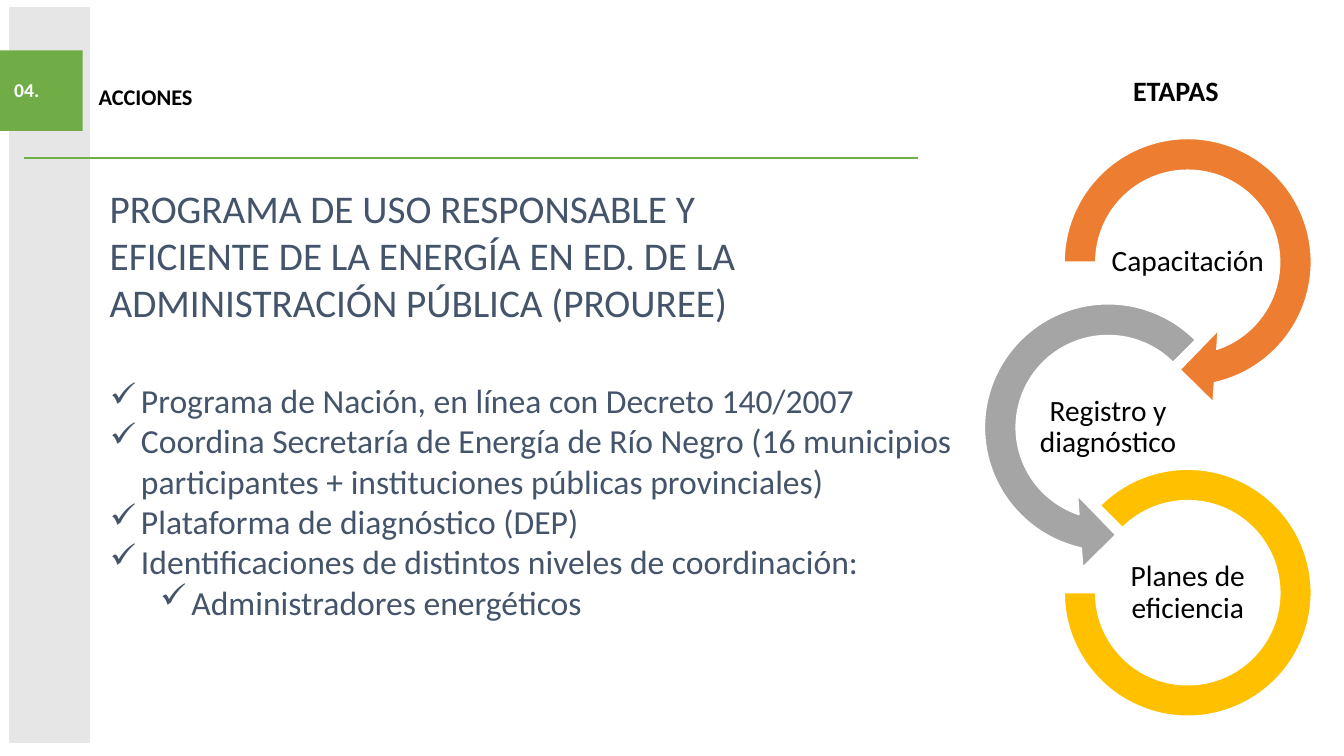
"""Build the PROUREE actions slide with its three-stage ring diagram."""
from lxml.etree import SubElement
from pptx import Presentation
from pptx.dml.color import RGBColor
from pptx.enum.shapes import MSO_CONNECTOR, MSO_SHAPE
from pptx.enum.text import MSO_ANCHOR, PP_ALIGN
from pptx.oxml.ns import qn
from pptx.util import Inches, Pt

THEME = {
    "font": "Calibri",
    "colors": {"band": "E7E6E6", "green": "70AD47", "slate": "44546A", "orange": "ED7D31",
               "gray": "A5A5A5", "gold": "FFC000", "black": "000000", "white": "FFFFFF"},
    "sizes": {"number": 14, "section": 16, "stages": 20, "stage": 21, "bullet": 24, "title": 28},
}
COLUMNS, ROWS = 133.3, 75
CELL = Inches(0.1)

presentation = Presentation()
presentation.slide_width = int(COLUMNS * CELL)
presentation.slide_height = int(ROWS * CELL)
slide = presentation.slides.add_slide(presentation.slide_layouts[6])


def add_panel(kind, box, fill, line=None):
    """Add a filled preset shape on the grid."""
    shape = slide.shapes.add_shape(kind, *(int(cells * CELL) for cells in box))
    shape.shadow.inherit = False
    shape.fill.solid()
    shape.fill.fore_color.rgb = RGBColor.from_string(THEME["colors"][fill])
    if line:
        shape.line.color.rgb = RGBColor.from_string(THEME["colors"][line])
        shape.line.width = Pt(1)
    else:
        shape.line.fill.background()
    return shape


def write(shape, lines, size, color, bold=False, frame=None, paragraph_format=None):
    """Fill a shape with paragraphs in one type style."""
    text_frame = shape.text_frame
    text_frame.text = "\n".join(lines)
    for name, value in ({"word_wrap": True, "vertical_anchor": MSO_ANCHOR.TOP} | (frame or {})).items():
        setattr(text_frame, name, value)
    for paragraph in text_frame.paragraphs:
        for name, value in ({"alignment": PP_ALIGN.LEFT} | (paragraph_format or {})).items():
            setattr(paragraph, name, value)
        font = paragraph.runs[0].font
        for name, value in {"name": THEME["font"], "size": Pt(THEME["sizes"][size]), "bold": bold}.items():
            setattr(font, name, value)
        font.color.rgb = RGBColor.from_string(THEME["colors"][color])
    return text_frame.paragraphs


add_panel(MSO_SHAPE.RECTANGLE, (1, 0.8, 7.9, 72.8), "band", "band")

rule = slide.shapes.add_connector(
    MSO_CONNECTOR.STRAIGHT, *(int(cells * CELL) for cells in (2.4, 15.7, 91, 15.7)))
rule.line.color.rgb = RGBColor.from_string(THEME["colors"]["green"])
rule.line.width = Pt(1.5)
SubElement(rule._element.spPr, qn("a:effectLst"))

middle = {"vertical_anchor": MSO_ANCHOR.MIDDLE}
number_tab = add_panel(MSO_SHAPE.RECTANGLE, (0, 5, 8.2, 8), "green")
write(number_tab, ["04."], "number", "white", True,
      middle | {"margin_left": int(1.4 * CELL)}, {"line_spacing": 0.9})

headings = [
    ((9.9, 17.8, 70.6, 15.1), "title", "slate", False, {}, {},
     "PROGRAMA DE USO RESPONSABLE Y EFICIENTE DE LA ENERGÍA EN ED. DE LA "
     "ADMINISTRACIÓN PÚBLICA (PROUREE)"),
    ((111.4, 6.8, 10.6, 4.4), "stages", "black", True, {"word_wrap": False}, {}, "ETAPAS"),
    ((8.8, 2.5, 115, 14.5), "section", "black", True, middle, {"line_spacing": 0.9}, "ACCIONES"),
]
for box, size, color, bold, frame, paragraph_format, text in headings:
    heading = slide.shapes.add_textbox(*(int(cells * CELL) for cells in box))
    write(heading, [text], size, color, bold, frame, paragraph_format)

stages = [
    ("Capacitación", MSO_SHAPE.CIRCULAR_ARROW, 28.5, "orange", (0.11, 11.42, 45, 108, 0.125)),
    ("Registro y diagnóstico", MSO_SHAPE.LEFT_CIRCULAR_ARROW, 28.5, "gray", (0.11, 11.42, 63, 189, 0.125)),
    ("Planes de eficiencia", MSO_SHAPE.BLOCK_ARC, 24.5, "gold", (135, 108, 0.127)),
]
LABEL_WIDTH, LABEL_HEIGHT = 15.8, 7.9
thin_margins = {f"margin_{side}": Inches(0.01) for side in ("left", "top", "right", "bottom")}
for index, (label, kind, diameter, color, adjustments) in enumerate(stages):
    center_x = 117.8 - LABEL_WIDTH / 2 * (index % 2)
    center_y = 26 + 16.4 * index
    ring = add_panel(kind, (center_x - diameter / 2, center_y - diameter / 2, diameter, diameter),
                     color, "white")
    for position, value in enumerate(adjustments):
        ring.adjustments[position] = value
    label_box = (center_x - LABEL_WIDTH / 2, center_y - LABEL_HEIGHT / 2, LABEL_WIDTH, LABEL_HEIGHT)
    caption = slide.shapes.add_textbox(*(int(cells * CELL) for cells in label_box))
    write(caption, [label], "stage", "black", False, middle | thin_margins,
          {"alignment": PP_ALIGN.CENTER, "line_spacing": 0.9, "space_after": Pt(7)})

actions = [
    ("Programa de Nación, en línea con Decreto 140/2007", 0),
    ("Coordina Secretaría de Energía de Río Negro (16 municipios participantes + "
     "instituciones públicas provinciales)", 0),
    ("Plataforma de diagnóstico (DEP)", 0),
    ("Identificaciones de distintos niveles de coordinación:", 0),
    ("Administradores energéticos", 1),
]
action_list = slide.shapes.add_textbox(*(int(cells * CELL) for cells in (9.9, 37.2, 88.2, 33.3)))
paragraphs = write(action_list, [text for text, level in actions], "bullet", "slate")
for paragraph, (text, level) in zip(paragraphs, actions):
    paragraph.level = level
    properties = paragraph._p.get_or_add_pPr()
    properties.set("marL", str(Inches(0.31 + 0.5 * level)))
    properties.set("indent", str(Inches(-0.31)))
    SubElement(properties, qn("a:buChar"), char="✓")

presentation.save("out.pptx")
